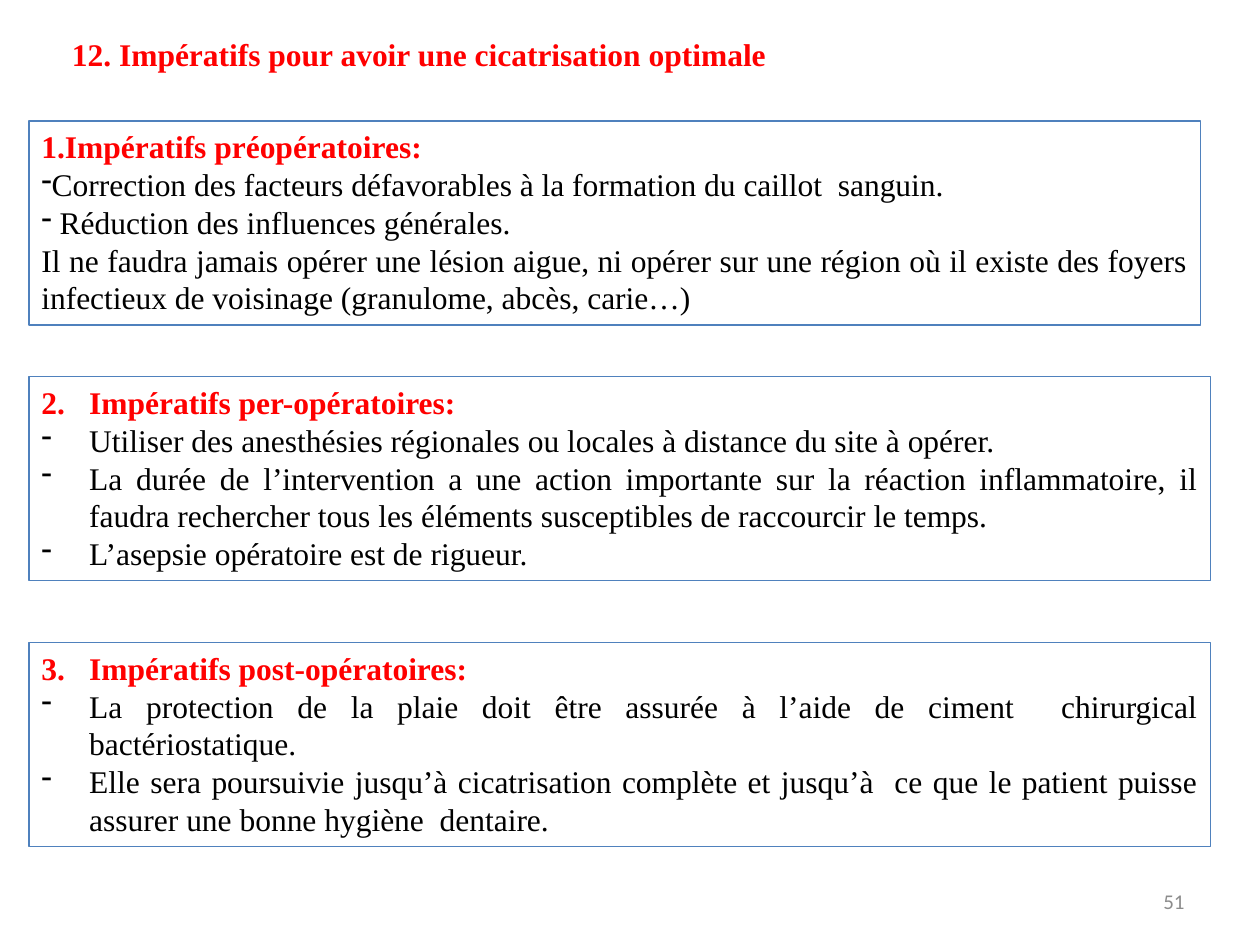
import pptx
import pptx.dml.color
import pptx.enum.shapes
import pptx.enum.text
import pptx.oxml.ns
import pptx.util
from lxml import etree

Inches = pptx.util.Inches
Align = pptx.enum.text.PP_ALIGN
Anchor = pptx.enum.text.MSO_ANCHOR
AutoSize = pptx.enum.text.MSO_AUTO_SIZE

# Content
TITLE = "12. Impératifs pour avoir une cicatrisation optimale"
PAGE_NUMBER = "51"
# Each section: top, width, hanging indent, heading, then (bullet, text) lines
SECTIONS = [
    (0.96, 9.3, 0, "Impératifs préopératoires:", [
        ("-", "Correction des facteurs défavorables à la formation du caillot  sanguin."),
        ("-", " Réduction des influences générales."),
        (None, "Il ne faudra jamais opérer une lésion aigue, ni opérer sur une région où "
               "il existe des foyers infectieux de voisinage (granulome, abcès, carie…)"),
    ]),
    (2.99, 9.38, 0.38, "Impératifs per-opératoires:", [
        ("-", "Utiliser des anesthésies régionales ou locales à distance du site à opérer."),
        ("-", "La durée de l’intervention a une action importante sur la réaction "
              "inflammatoire, il faudra rechercher tous les éléments susceptibles de "
              "raccourcir le temps."),
        ("-", "L’asepsie opératoire est de rigueur."),
    ]),
    (5.1, 9.38, 0.38, "Impératifs post-opératoires:", [
        ("-", "La protection de la plaie doit être assurée à l’aide de ciment  chirurgical "
              "bactériostatique."),
        ("-", "Elle sera poursuivie jusqu’à cicatrisation complète et jusqu’à  ce que le "
              "patient puisse assurer une bonne hygiène  dentaire."),
    ]),
]
LEFT, HEIGHT = 0.23, 1.62
RED, BLACK, BLUE, GREY = "FF0000", "000000", "4F81BD", "8C8C8C"


def colour(value):
    return pptx.dml.color.RGBColor.from_string(value)


def set_bullet(para, indent, bullet=None, number=None):
    """Hanging indent with a character, a number or no bullet."""
    props = para._p.get_or_add_pPr()
    props.set("marL", str(Inches(indent)))
    props.set("indent", str(-Inches(indent)))

    def add(tag, **attributes):
        etree.SubElement(props, pptx.oxml.ns.qn(tag), **attributes)

    if number:
        add("a:buFontTx")
        add("a:buAutoNum", type="arabicPeriod", startAt=str(number))
    elif bullet:
        add("a:buFontTx")
        add("a:buChar", char=bullet)
    else:
        add("a:buNone")


def set_font(para, text_colour, bold=False, size=18, name="Times New Roman"):
    font = para.font
    font.name, font.size, font.bold = name, pptx.util.Pt(size), bold
    font.color.rgb = colour(text_colour)


def set_frame(frame, anchor=Anchor.TOP, auto_size=AutoSize.SHAPE_TO_FIT_TEXT):
    frame.word_wrap = True
    frame.vertical_anchor = anchor
    frame.auto_size = auto_size


deck = pptx.Presentation()
deck.slide_width, deck.slide_height = Inches(10), Inches(7.5)
page = deck.slides.add_slide(deck.slide_layouts[5])

# Title
title = page.shapes.title
title.left, title.top = Inches(0.47), Inches(0.23)
title.width, title.height = Inches(6.46), Inches(0.4)
title.text_frame.text = TITLE
set_frame(title.text_frame)
para = title.text_frame.paragraphs[0]
para.alignment = Align.LEFT
set_bullet(para, 0.44)
set_font(para, RED, bold=True)

# Framed sections
for number, (top, width, indent, heading, lines) in enumerate(SECTIONS, start=1):
    box = page.shapes.add_shape(
        pptx.enum.shapes.MSO_SHAPE.RECTANGLE,
        Inches(LEFT), Inches(top), Inches(width), Inches(HEIGHT))
    box.shadow.inherit = False
    box.fill.background()
    box.line.color.rgb = colour(BLUE)
    box.line.width = pptx.util.Pt(0.75)
    frame = box.text_frame
    set_frame(frame)
    para = frame.paragraphs[0]
    para.text = heading
    para.level = 1
    para.alignment = Align.JUSTIFY
    set_bullet(para, indent, number=number)
    set_font(para, RED, bold=True)
    for bullet, text in lines:
        para = frame.add_paragraph()
        para.text = text
        para.alignment = Align.JUSTIFY
        set_bullet(para, indent, bullet)
        set_font(para, BLACK)

# Page number
box = page.shapes.add_textbox(Inches(7.17), Inches(6.95), Inches(2.33), Inches(0.4))
set_frame(box.text_frame, Anchor.MIDDLE, AutoSize.NONE)
para = box.text_frame.paragraphs[0]
para.text = PAGE_NUMBER
para.alignment = Align.RIGHT
set_font(para, GREY, size=12, name="Calibri")

deck.save("out.pptx")
